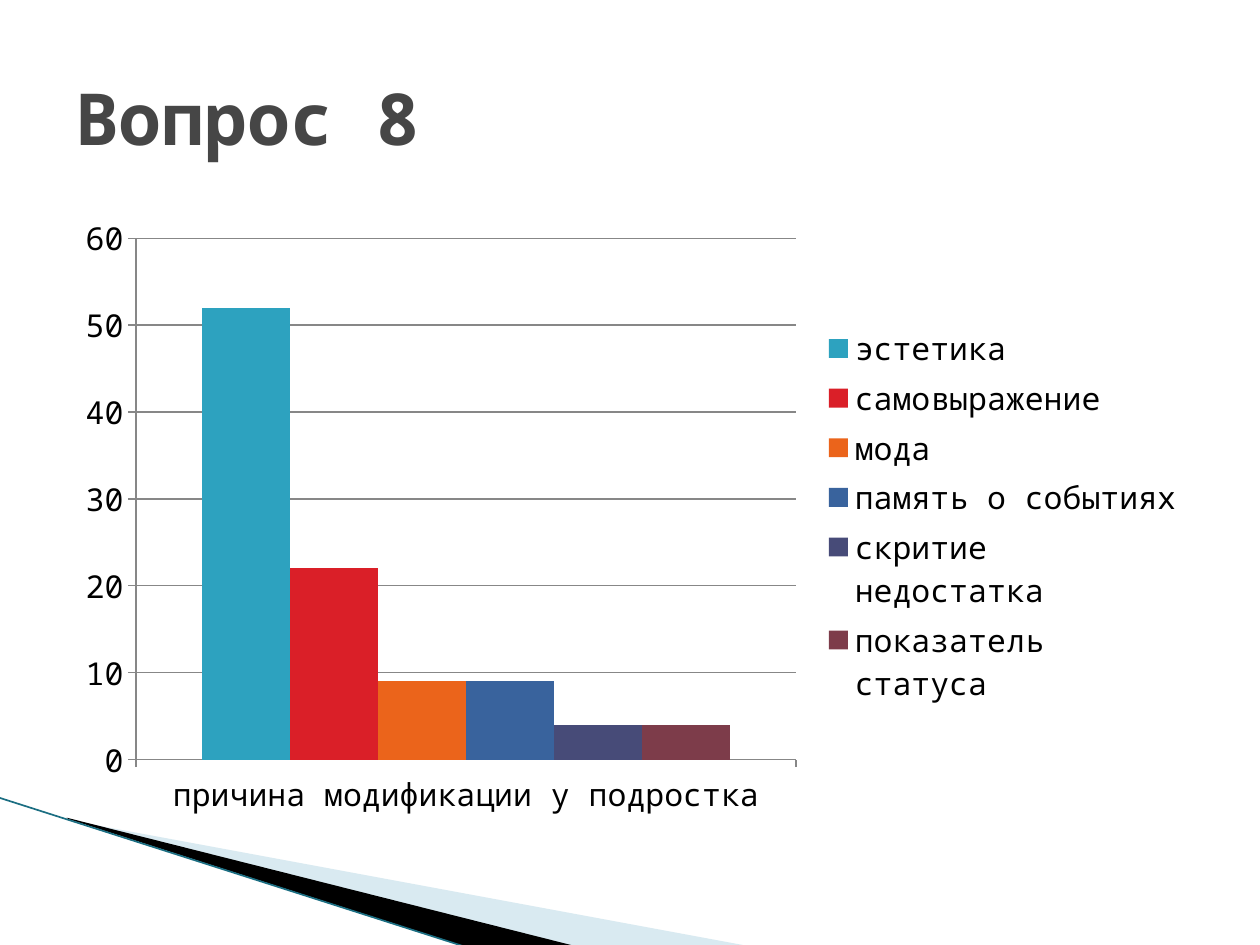
from dataclasses import dataclass

import pptx
import pptx.chart.data
import pptx.dml.color
import pptx.enum.chart
import pptx.enum.shapes
import pptx.enum.text
import pptx.oxml
import pptx.oxml.ns
import pptx.util
from lxml import etree

RGBColor = pptx.dml.color.RGBColor
WHITE = RGBColor(0xFF, 0xFF, 0xFF)
BLACK = RGBColor(0x00, 0x00, 0x00)
TITLE_GREY = RGBColor(0x46, 0x46, 0x46)
AXIS_GREY = RGBColor(0x87, 0x87, 0x87)
PALE_BLUE = RGBColor(0xA0, 0xCB, 0xDC)
EDGE_TEAL = RGBColor(0x1B, 0x6E, 0x82)

FONT = "Noto Sans Mono"
SLIDE_WIDTH = pptx.util.Inches(10)
SLIDE_HEIGHT = pptx.util.Inches(7.5)
MARGIN = 0.05  # share of the slide width
CONTENT_WIDTH = 1 - 2 * MARGIN


@dataclass(frozen=True)
class Reason:
    name: str
    answers: int
    color: RGBColor


@dataclass(frozen=True)
class Wedge:
    """A filled sliver; points are in inches."""
    points: tuple[tuple[float, float], ...]
    color: RGBColor
    opacity: int = 100


REASONS = (
    Reason("эстетика", 52, RGBColor(0x2D, 0xA2, 0xBF)),
    Reason("самовыражение", 22, RGBColor(0xDA, 0x1F, 0x28)),
    Reason("мода", 9, RGBColor(0xEB, 0x64, 0x1B)),
    Reason("память о событиях", 9, RGBColor(0x39, 0x63, 0x9D)),
    Reason("скритие недостатка", 4, RGBColor(0x47, 0x4B, 0x78)),
    Reason("показатель статуса", 4, RGBColor(0x7D, 0x3C, 0x4A)),
)
WEDGES = (
    Wedge(((0.55, 6.51), (5.95, 7.51), (4.56, 7.51), (0.55, 6.5)), PALE_BLUE, 40),
    Wedge(((0.53, 6.49), (4.57, 7.51), (3.72, 7.52), (0.54, 6.5)), BLACK),
)


def share_box(left: float, top: float, width: float, height: float) -> tuple[int, ...]:
    """Turn shares of the slide into left, top, width and height."""
    return (int(left * SLIDE_WIDTH), int(top * SLIDE_HEIGHT),
            int(width * SLIDE_WIDTH), int(height * SLIDE_HEIGHT))


def draw_wedge(slide, wedge: Wedge) -> None:
    start, *others = [(pptx.util.Inches(x), pptx.util.Inches(y)) for x, y in wedge.points]
    builder = slide.shapes.build_freeform(*start)
    builder.add_line_segments(others, close=True)
    shape = builder.convert_to_shape()
    shape.shadow.inherit = False
    shape.line.fill.background()
    shape.fill.solid()
    shape.fill.fore_color.rgb = wedge.color
    if wedge.opacity < 100:
        color = shape.fill._xPr.find(".//" + pptx.oxml.ns.qn("a:srgbClr"))
        alpha = etree.SubElement(color, pptx.oxml.ns.qn("a:alpha"))
        alpha.set("val", str(wedge.opacity * 1000))


def draw_edge(slide) -> None:
    connector = slide.shapes.add_connector(
        pptx.enum.shapes.MSO_CONNECTOR.STRAIGHT,
        pptx.util.Inches(-0.01), pptx.util.Inches(6.33),
        pptx.util.Inches(3.71), pptx.util.Inches(7.52))
    connector.line.color.rgb = EDGE_TEAL
    connector.line.width = pptx.util.Pt(0.95)
    etree.SubElement(connector._element.spPr, pptx.oxml.ns.qn("a:effectLst"))


def draw_title(slide, text: str) -> None:
    box = slide.shapes.add_textbox(*share_box(MARGIN, 0.04, CONTENT_WIDTH, 0.167))
    frame = box.text_frame
    frame.word_wrap = True
    frame.vertical_anchor = pptx.enum.text.MSO_ANCHOR.MIDDLE
    run = frame.paragraphs[0].add_run()
    run.text = text
    run.font.name = FONT
    run.font.size = pptx.util.Pt(41)
    run.font.bold = True
    run.font.color.rgb = TITLE_GREY


def style_axis(axis) -> None:
    axis.major_tick_mark = pptx.enum.chart.XL_TICK_MARK.OUTSIDE
    axis.minor_tick_mark = pptx.enum.chart.XL_TICK_MARK.NONE
    axis.format.line.color.rgb = AXIS_GREY
    axis.format.line.width = pptx.util.Pt(0.75)


def draw_chart(slide) -> None:
    data = pptx.chart.data.CategoryChartData()
    data.categories = ["причина модификации у подростка"]
    for reason in REASONS:
        data.add_series(reason.name, [reason.answers])
    chart = slide.shapes.add_chart(
        pptx.enum.chart.XL_CHART_TYPE.COLUMN_CLUSTERED,
        *share_box(MARGIN, 0.216, CONTENT_WIDTH, 0.66), data).chart
    chart.has_title = False
    chart.font.name = FONT
    chart.font.size = pptx.util.Pt(18)
    chart.font.color.rgb = BLACK
    chart.has_legend = True
    chart.legend.position = pptx.enum.chart.XL_LEGEND_POSITION.RIGHT
    chart.legend.include_in_layout = False

    plot = chart.plots[0]
    plot.vary_by_categories = False
    plot.gap_width = 150
    plot.overlap = 0
    for series, reason in zip(plot.series, REASONS):
        series.format.fill.solid()
        series.format.fill.fore_color.rgb = reason.color

    style_axis(chart.category_axis)
    style_axis(chart.value_axis)
    chart.value_axis.minimum_scale = 0
    chart.value_axis.maximum_scale = 60
    chart.value_axis.major_unit = 10
    gridlines = chart.value_axis.major_gridlines.format.line
    gridlines.color.rgb = AXIS_GREY
    gridlines.width = pptx.util.Pt(0.75)


def main() -> None:
    presentation = pptx.Presentation()
    presentation.slide_width = SLIDE_WIDTH
    presentation.slide_height = SLIDE_HEIGHT
    slide = presentation.slides.add_slide(presentation.slide_layouts[6])
    slide.background.fill.solid()
    slide.background.fill.fore_color.rgb = WHITE
    for wedge in WEDGES:
        draw_wedge(slide, wedge)
    draw_edge(slide)
    draw_chart(slide)
    draw_title(slide, "Вопрос 8")
    presentation.save("out.pptx")


if __name__ == "__main__":
    main()
